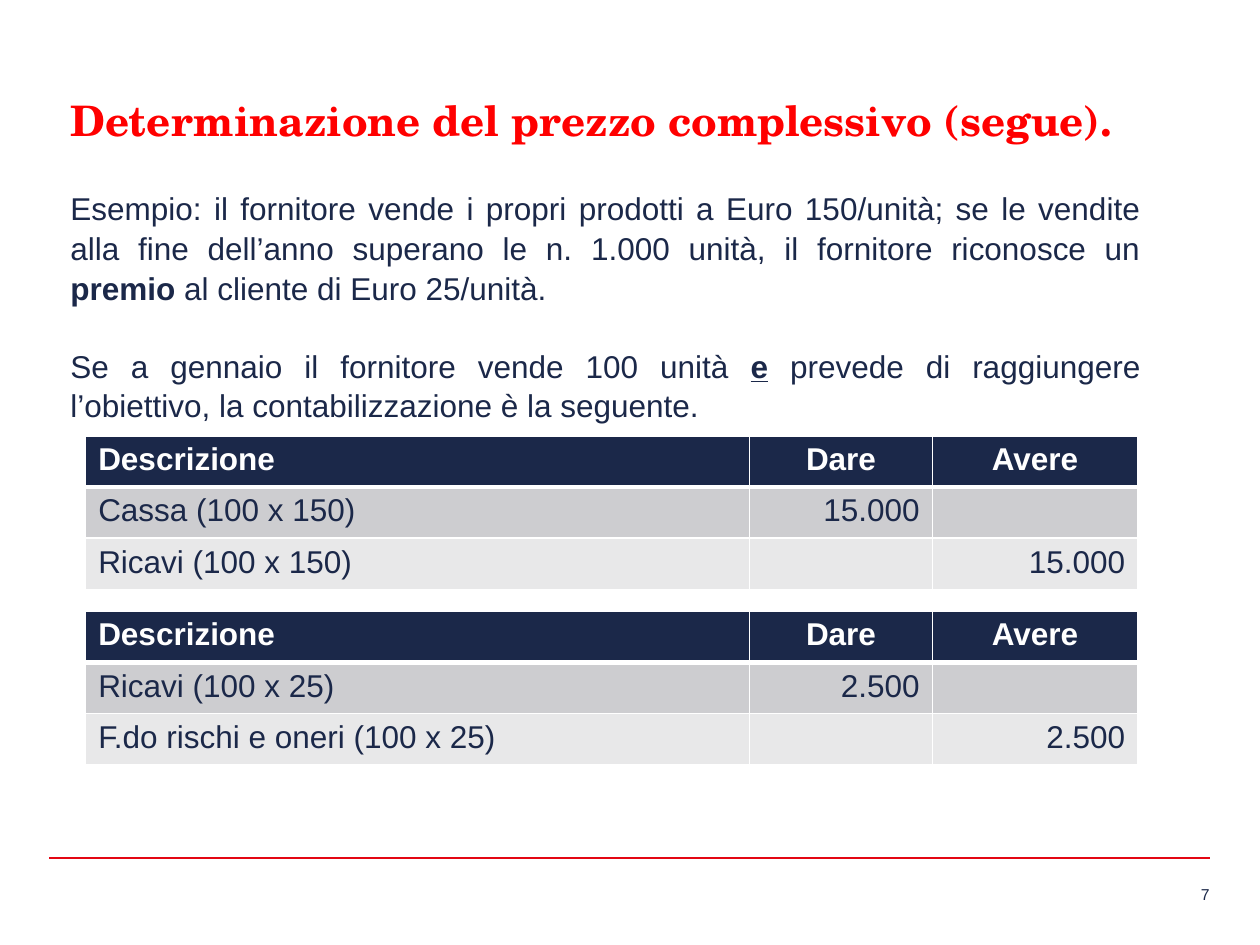
from lxml import etree
from pptx import Presentation
from pptx import util as u
from pptx.dml.color import RGBColor
from pptx.enum import shapes, text
from pptx.oxml import parse_xml
from pptx.oxml.ns import qn

NAVY, WHITE, RED, RULE = "1B2849", "FFFFFF", "FF0000", "E30613"
BANDS = ["CDCDD0", "E8E8E9"]
NS = "http://schemas.openxmlformats.org/drawingml/2006/main"
ALIGN = {
    "l": text.PP_ALIGN.LEFT,
    "c": text.PP_ALIGN.CENTER,
    "r": text.PP_ALIGN.RIGHT,
    "j": text.PP_ALIGN.JUSTIFY,
}


def rgb(value):
    return RGBColor.from_string(value)


class Deck:
    COLS, ROWS = 100, 75

    def __init__(self):
        self.prs = Presentation()
        self.prs.slide_width, self.prs.slide_height = u.Inches(10), u.Inches(7.5)
        self.s = self.prs.slides.add_slide(self.prs.slide_layouts[6])
        self.style = {"name": "Arial", "size": u.Pt(18), "bold": False}

    def x(self, cols):
        return round(self.prs.slide_width * cols / self.COLS)

    def y(self, rows):
        return round(self.prs.slide_height * rows / self.ROWS)

    def box(self, left, top, width, height):
        return self.x(left), self.y(top), self.x(width), self.y(height)

    def run(self, p, words, color=NAVY, **extra):
        r = p.add_run()
        r.text = words
        for key, value in {**self.style, **extra}.items():
            setattr(r.font, key, value)
        r.font.color.rgb = rgb(color)

    def text(self, at, paragraphs, color=NAVY, align="l", frame=None, para=None, gap=0, **font):
        tf = self.s.shapes.add_textbox(*self.box(*at)).text_frame
        tf.word_wrap = True
        for key, value in (frame or {}).items():
            setattr(tf, key, value)
        for i, runs in enumerate(paragraphs):
            p = tf.add_paragraph() if i else tf.paragraphs[0]
            p.alignment = ALIGN[align]
            for key, value in (para or {}).items():
                setattr(p, key, value)
            if i:
                p.space_before = u.Pt(gap)
            for words, extra in runs:
                self.run(p, words, color, **{**font, **extra})

    def line(self, x1, y1, x2, y2, color):
        sp = self.s.shapes.add_connector(
            shapes.MSO_CONNECTOR.STRAIGHT, self.x(x1), self.y(y1), self.x(x2), self.y(y2))
        sp.line.color.rgb, sp.line.width = rgb(color), u.Pt(1)
        etree.SubElement(sp._element.spPr, qn("a:effectLst"))

    def borders(self, cell, widths):
        for side, width in zip("LRTB", widths):
            cell._tc.get_or_add_tcPr().append(parse_xml(
                f'<a:ln{side} xmlns:a="{NS}" w="{u.Pt(width)}"><a:solidFill>'
                f'<a:srgbClr val="{WHITE}"/></a:solidFill></a:ln{side}>'))

    def table(self, left, top, widths, row_height, rows):
        at = self.box(left, top, sum(widths), row_height * len(rows))
        table = self.s.shapes.add_table(len(rows), len(widths), *at).table
        for column, width in zip(table.columns, widths):
            column.width = self.x(width)
        for i, row in enumerate(rows):
            head = i == 0
            aligns = "lcc" if head else "lrr"
            for j, words in enumerate(row):
                cell = table.cell(i, j)
                self.borders(cell, (1, 1, 3 if i == 1 else 1, 3 if head else 1))
                cell.fill.solid()
                cell.fill.fore_color.rgb = rgb(NAVY if head else BANDS[(i - 1) % 2])
                p = cell.text_frame.paragraphs[0]
                p.alignment = ALIGN[aligns[j]]
                if words:
                    self.run(p, words, WHITE if head else NAVY, bold=head)


def main():
    d = Deck()
    d.line(3.9, 68.1, 96, 68.1, RULE)
    no_margins = dict.fromkeys(("margin_left", "margin_top", "margin_right", "margin_bottom"), 0)
    d.text((89.1, 70.2, 6.9, 1.5), [[("7", {})]], align="r", frame=no_margins, size=u.Pt(9))
    d.text((4.6, 7, 90.8, 5), [[("Determinazione del prezzo complessivo (segue).", {})]],
           RED, name="TeX Gyre Schola", size=u.Pt(24), bold=True)
    d.text((4.6, 14.4, 86.9, 27.3), [
        [("Esempio: il fornitore vende i propri prodotti a Euro 150/unità; se le vendite "
          "alla fine dell’anno superano le n. 1.000 unità, il fornitore riconosce un ", {}),
         ("premio", {"bold": True}),
         (" al cliente di Euro 25/unità.", {})],
        [("Se a gennaio il fornitore vende 100 unità ", {}),
         ("e", {"bold": True, "underline": True}),
         (" prevede di raggiungere l’obiettivo, la contabilizzazione è la seguente.", {})],
    ], align="j", para={"line_spacing": 1.05}, gap=21.7)

    header = ("Descrizione", "Dare", "Avere")
    entries = [
        ("Cassa (100 x 150)", "Ricavi (100 x 150)", "15.000"),
        ("Ricavi (100 x 25)", "F.do rischi e oneri (100 x 25)", "2.500"),
    ]
    for i, (debit, credit, amount) in enumerate(entries):
        d.table(6.8, 34.6 + 13.9 * i, (52.7, 14.5, 16.3), 4.06,
                [header, (debit, amount, ""), (credit, "", amount)])
    d.prs.save("out.pptx")


if __name__ == "__main__":
    main()
